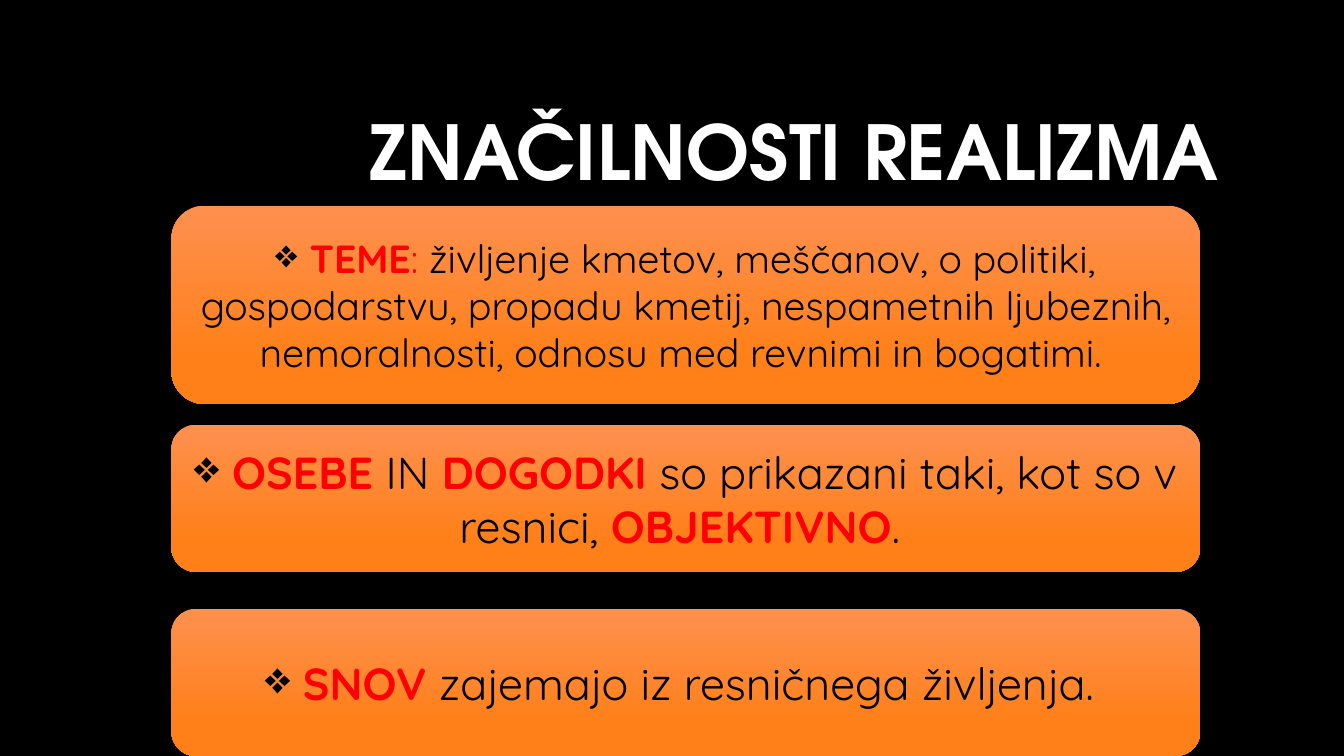
from lxml import etree
from pptx import Presentation
from pptx.dml.color import RGBColor
from pptx.enum.shapes import MSO_SHAPE
from pptx.enum.text import MSO_ANCHOR, PP_ALIGN
from pptx.oxml.ns import qn
from pptx.util import Cm, Pt

ROUNDED = MSO_SHAPE.ROUNDED_RECTANGLE
MIDDLE = MSO_ANCHOR.MIDDLE
CENTER = PP_ALIGN.CENTER

COLORS = {
    "background": "000000",
    "title": "FFFFFF",
    "text": "000000",
    "keyword": "FF0000",
    "card_top": "FE904F",
    "card_bottom": "FF8019",
}
TITLE_FONT = "TeX Gyre Adventor"
BODY_FONT = "Quicksand"


def rgb(name):
    return RGBColor.from_string(COLORS[name])


class Deck:
    """Holds the style and the current slide."""

    def __init__(self, prs):
        self.slide = prs.slides.add_slide(prs.slide_layouts[6])
        fill = self.slide.background.fill
        fill.solid()
        fill.fore_color.rgb = rgb("background")

    def add_run(self, p, text, font, size, color, bold):
        r = p.add_run()
        r.text = text
        r.font.name = font
        r.font.size = Pt(size)
        r.font.bold = bold
        r.font.color.rgb = rgb(color)

    def title(self, text, left, top, width, height):
        tf = self.slide.shapes.add_textbox(
            Cm(left), Cm(top), Cm(width), Cm(height)).text_frame
        tf.word_wrap = True
        tf.vertical_anchor = MIDDLE
        p = tf.paragraphs[0]
        p.alignment = CENTER
        p.line_spacing = 0.9
        self.add_run(p, text, TITLE_FONT, 54, "title", True)

    def card(self, top, height, size, parts):
        sp = self.slide.shapes.add_shape(
            ROUNDED, Cm(4.32), Cm(top), Cm(25.93), Cm(height))
        sp.shadow.inherit = False
        sp.line.fill.background()
        sp.fill.gradient()
        sp.fill.gradient_angle = 270
        stops = zip(sp.fill.gradient_stops, (0, 0.78), ("card_top", "card_bottom"))
        for stop, position, color in stops:
            stop.position = position
            stop.color.rgb = rgb(color)

        tf = sp.text_frame
        tf.word_wrap = True
        tf.vertical_anchor = MIDDLE
        p = tf.paragraphs[0]
        p.alignment = CENTER
        bullet = etree.SubElement(p._p.get_or_add_pPr(), qn("a:buChar"))
        bullet.set("char", "❖")
        for text, color, bold in parts:
            self.add_run(p, text, BODY_FONT, size, color, bold)


def plain(text):
    return text, "text", False


def keyword(text):
    return text, "keyword", True


def main():
    prs = Presentation()
    prs.slide_width, prs.slide_height = Cm(33.87), Cm(19.05)
    deck = Deck(prs)

    # Title
    deck.title("ZNAČILNOSTI REALIZMA", 8.05, 2.13, 23.93, 3.58)

    # Characteristics: top, height, text size, runs
    cards = [
        (5.18, 5.0, 28, [
            plain(" "), keyword("TEME"), (": ", "keyword", False),
            plain("življenje kmetov, meščanov, o politiki, gospodarstvu, "
                  "propadu kmetij, nespametnih ljubeznih, nemoralnosti, "
                  "odnosu med revnimi in bogatimi. ")]),
        (10.7, 3.71, 32, [
            plain(" "), keyword("OSEBE"), plain(" IN "), keyword("DOGODKI"),
            plain(" so prikazani taki, kot so v resnici, "),
            keyword("OBJEKTIVNO"), plain(". ")]),
        (15.34, 3.71, 32, [
            plain(" "), keyword("SNOV"),
            plain(" zajemajo iz resničnega življenja. ")]),
    ]
    for card in cards:
        deck.card(*card)

    prs.save("out.pptx")


if __name__ == "__main__":
    main()
